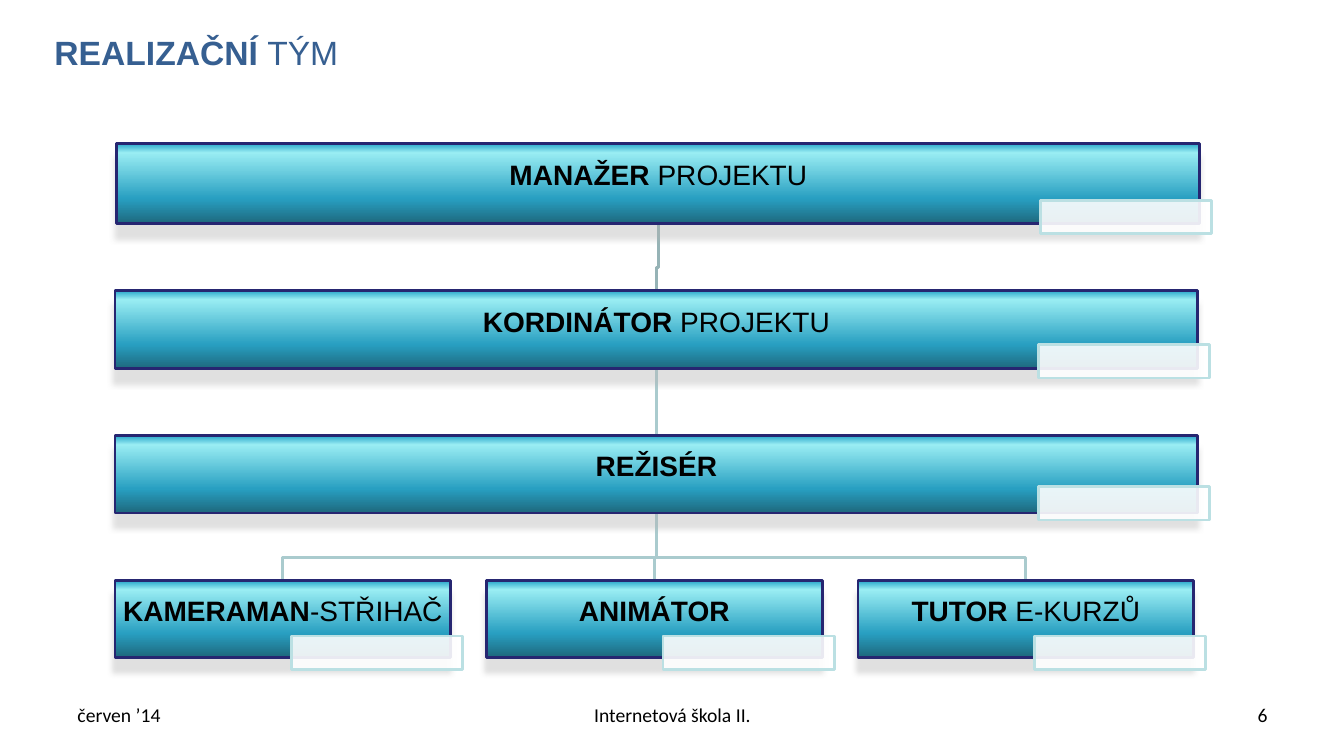
import pptx
import pptx.util
import pptx.dml.color
import pptx.enum.shapes
import pptx.enum.text
import pptx.oxml
from dataclasses import dataclass
from pptx.util import Inches

# Content: each text is a (bold, regular) pair
TITLE = ("REALIZAČNÍ ", "TÝM")
WIDE, NARROW = 10.74, 3.33
# Role: text, left, top, width, height, top of its tag
ROLES = {
    "manager": (("MANAŽER ", "PROJEKTU"), 1.16, 1.42, WIDE, 0.8, 1.99),
    "coordinator": (("KORDINÁTOR", " PROJEKTU"), 1.14, 2.88, WIDE, 0.78, 3.42),
    "director": (("REŽISÉR", ""), 1.14, 4.32, WIDE, 0.77, 4.83),
}
CREW = {
    "cameraman": ("KAMERAMAN", "-STŘIHAČ"),
    "animator": ("ANIMÁTOR", ""),
    "tutor": ("TUTOR ", "E-KURZŮ"),
}
CREW_STEP = 3.685
for index, (name, words) in enumerate(CREW.items()):
    ROLES[name] = (words, 1.14 + index * CREW_STEP, 5.76, NARROW, 0.76, 6.31)
LINKS = [("director", name) for name in reversed(CREW)]
LINKS += [("coordinator", "director"), ("manager", "coordinator")]
ALIGN = pptx.enum.text.PP_ALIGN
FOOTER = [
    ("červen ’14", 0.67, 3.11, ALIGN.LEFT),
    ("Internetová škola II.", 4.56, 4.22, ALIGN.CENTER),
    ("6", 9.56, 3.11, ALIGN.RIGHT),
]


@dataclass
class Theme:
    heading: str = "365F91"
    text: str = "000000"
    border: str = "262671"
    tag_fill: str = "FFFFFF"
    tag_line: str = "BBE0E3"
    link: str = "AACBCE"
    top_link: str = "96B3B6"
    gradient: tuple = ((0, "23A3C8"), (12, "99EDF3"), (69, "289FC1"), (100, "1E687D"))
    shadow: str = "B3B3B3"
    font: str = "Arial"
    footer_font: str = "Calibri"
    title_size: int = 24
    role_size: int = 20
    footer_size: int = 14
    line_width: int = 2


THEME = Theme()
TAG_WIDTH, TAG_HEIGHT, TAG_INSET = 1.7, 0.33, 1.58
BEND = 0.225
RECTANGLE = pptx.enum.shapes.MSO_SHAPE.RECTANGLE
MIDDLE = pptx.enum.text.MSO_ANCHOR.MIDDLE


def rgb(color):
    return pptx.dml.color.RGBColor.from_string(color)


def xml(tag, attributes, body=""):
    namespace = "http://schemas.openxmlformats.org/drawingml/2006/main"
    return pptx.oxml.parse_xml(f'<a:{tag} xmlns:a="{namespace}" {attributes}>{body}</a:{tag}>')


def set_line(shape, color):
    shape.line.color.rgb = rgb(color)
    shape.line.width = pptx.util.Pt(THEME.line_width)


def style_span(span, font, size, color, bold=False):
    span.font.name = font
    span.font.size = pptx.util.Pt(size)
    span.font.color.rgb = rgb(color)
    span.font.bold = bold


def write_pair(para, words, size, color):
    for word, bold in zip(words, (True, False)):
        if word:
            span = para.add_run()
            span.text = word
            style_span(span, THEME.font, size, color, bold)


def add_link(shapes, parent, child):
    _, left, top, width, height, _ = ROLES[parent]
    _, child_left, end, child_width, _, _ = ROLES[child]
    start_x, end_x = left + width / 2, child_left + child_width / 2
    start, bend = top + height, end - BEND
    if start_x == end_x:
        link = shapes.add_connector(pptx.enum.shapes.MSO_CONNECTOR.STRAIGHT, Inches(start_x),
                                    Inches(start), Inches(end_x), Inches(end))
        link._element.spPr.append(xml("effectLst", ""))
    else:
        builder = shapes.build_freeform(Inches(start_x), Inches(start))
        corners = [(start_x, bend), (end_x, bend), (end_x, end)]
        builder.add_line_segments([(Inches(x), Inches(y)) for x, y in corners], close=False)
        link = builder.convert_to_shape()
        link.fill.background()
        link.shadow.inherit = False
    set_line(link, THEME.top_link if parent == "manager" else THEME.link)


def add_role(shapes, words, left, top, width, height, tag_top):
    # Gradient box with its shadow
    box = shapes.add_shape(RECTANGLE, Inches(left), Inches(top), Inches(width), Inches(height))
    box.shadow.inherit = False
    box.fill.gradient()
    box.fill.gradient_angle = 270
    stops = box._element.spPr.find(".//{*}gsLst")
    for stop in list(stops):
        stops.remove(stop)
    for position, color in THEME.gradient:
        stops.append(xml("gs", f'pos="{position * 1000}"', f'<a:srgbClr val="{color}"/>'))
    set_line(box, THEME.border)
    box._element.spPr.find("{*}effectLst").append(xml(
        "outerShdw", 'blurRad="50800" dist="127000" dir="5640000" algn="tl" rotWithShape="0"',
        f'<a:srgbClr val="{THEME.shadow}"><a:alpha val="40000"/></a:srgbClr>'))

    # Role name
    frame = box.text_frame
    frame.word_wrap = True
    frame.vertical_anchor = MIDDLE
    frame.margin_left = frame.margin_right = frame.margin_top = Inches(0.01)
    frame.margin_bottom = Inches(0.14)
    para = frame.paragraphs[0]
    para.alignment = ALIGN.CENTER
    para.line_spacing = 0.9
    write_pair(para, words, THEME.role_size, THEME.text)

    # Empty tag over the lower right corner
    tag = shapes.add_shape(RECTANGLE, Inches(left + width - TAG_INSET), Inches(tag_top),
                           Inches(TAG_WIDTH), Inches(TAG_HEIGHT))
    tag.shadow.inherit = False
    tag.fill.solid()
    tag.fill.fore_color.rgb = rgb(THEME.tag_fill)
    tag._element.spPr.find("{*}solidFill")[0].append(xml("alpha", 'val="90000"'))
    set_line(tag, THEME.tag_line)


def main():
    deck = pptx.Presentation()
    deck.slide_width, deck.slide_height = Inches(13.33), Inches(7.5)
    page = deck.slides.add_slide(deck.slide_layouts[5])

    # Title
    title = page.shapes.title
    title.left, title.top = Inches(0.44), Inches(0.17)
    title.width, title.height = Inches(11.22), Inches(0.7)
    title.text_frame.vertical_anchor = MIDDLE
    para = title.text_frame.paragraphs[0]
    para.alignment = ALIGN.LEFT
    write_pair(para, TITLE, THEME.title_size, THEME.heading)

    # Organisation chart, links behind boxes
    for parent, child in LINKS:
        add_link(page.shapes, parent, child)
    for role in ROLES.values():
        add_role(page.shapes, *role)

    # Footer
    for words, left, width, alignment in FOOTER:
        box = page.shapes.add_textbox(Inches(left), Inches(6.92), Inches(width), Inches(0.43))
        box.text_frame.word_wrap = True
        box.text_frame.text = words
        para = box.text_frame.paragraphs[0]
        para.alignment = alignment
        style_span(para.runs[0], THEME.footer_font, THEME.footer_size, THEME.text)

    deck.save("out.pptx")


if __name__ == "__main__":
    main()
